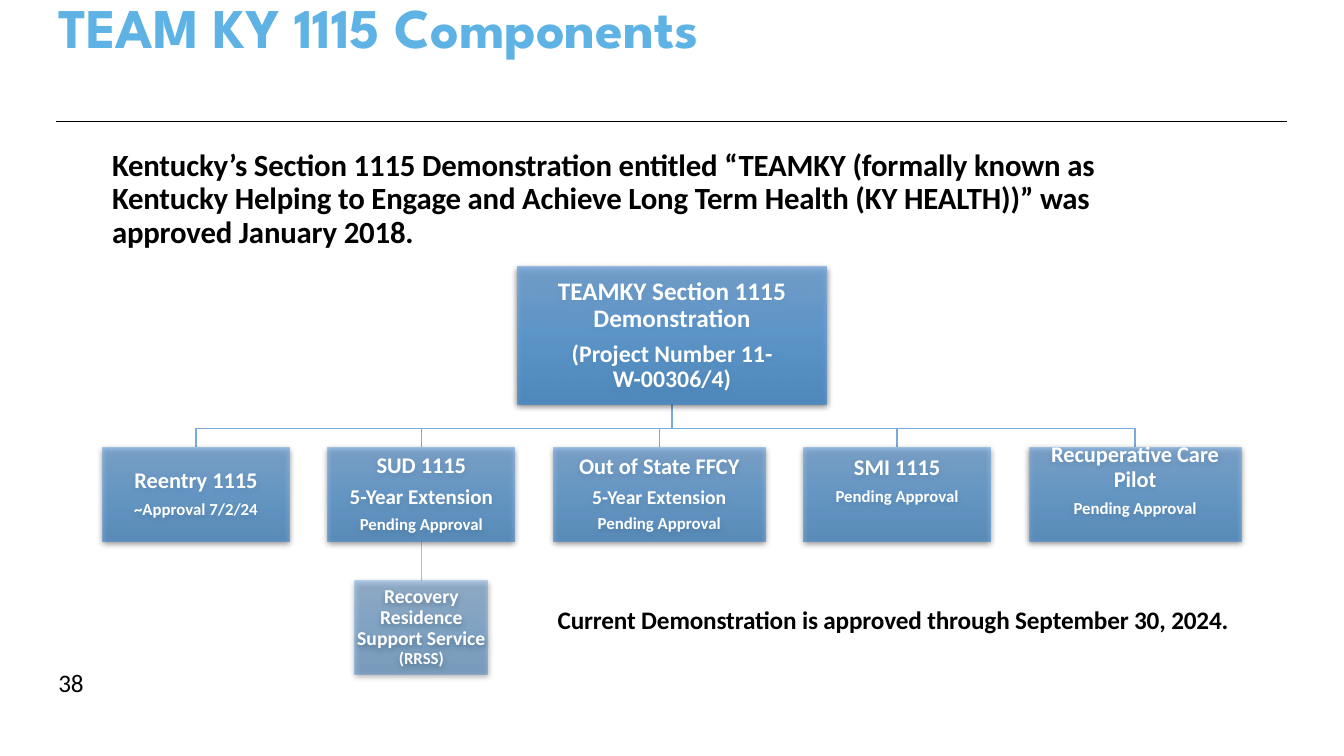
import pptx
import pptx.dml.color
import pptx.enum.shapes
import pptx.enum.text
import pptx.oxml
import pptx.oxml.ns
import pptx.util

Pt = pptx.util.Pt
Inches = pptx.util.Inches
RGBColor = pptx.dml.color.RGBColor
ALIGN = pptx.enum.text.PP_ALIGN
ANCHOR = pptx.enum.text.MSO_ANCHOR
SHAPE = pptx.enum.shapes.MSO_SHAPE

TITLE_BLUE = RGBColor(0x5E, 0xB3, 0xE4)
BRANCH_BLUE = RGBColor(0x7A, 0xA9, 0xDA)
TWIG_BLUE = RGBColor(0xA5, 0xC0, 0xE3)
BOX_GRADIENT = [
    (0, RGBColor(0x71, 0xA6, 0xDB)),
    (50, RGBColor(0x55, 0x9B, 0xDB)),
    (100, RGBColor(0x44, 0x8A, 0xCA)),
]
BLACK = RGBColor(0, 0, 0)
WHITE = RGBColor(255, 255, 255)
NAMESPACE = pptx.oxml.ns.nsdecls("a")

presentation = pptx.Presentation()
presentation.slide_width = Inches(13.33)
presentation.slide_height = Inches(7.5)
slide = presentation.slides.add_slide(presentation.slide_layouts[6])
column = presentation.slide_width / 100
row = presentation.slide_height / 75


def write_text(shape, paragraphs, color, margins, font="Calibri", bold=True,
               align=ALIGN.LEFT, anchor=ANCHOR.TOP, spacing=0.9, tracking=0):
    frame = shape.text_frame
    frame.word_wrap = True
    frame.vertical_anchor = anchor
    frame.margin_left, frame.margin_top, frame.margin_right, frame.margin_bottom = map(Inches, margins)
    for index, runs in enumerate(paragraphs):
        paragraph = frame.add_paragraph() if index else frame.paragraphs[0]
        paragraph.alignment = align
        paragraph.line_spacing = spacing
        if index < len(paragraphs) - 1:
            paragraph.space_after = Pt(round(0.35 * runs[0][1], 1))
        for text, size in runs:
            run = paragraph.add_run()
            run.text = text
            run.font.name = font
            run.font.size = Pt(size)
            run.font.bold = bold
            run.font.color.rgb = color
            if tracking:
                run._r.get_or_add_rPr().set("spc", str(tracking))


def add_box(center, top, width, height, opacity, paragraphs, bottom_margin=0.01):
    box = slide.shapes.add_shape(
        SHAPE.RECTANGLE, int((center - width / 2) * column), int(top * row),
        int(width * column), int(height * row))
    box.line.fill.background()
    stops = "".join(
        f'<a:gs pos="{position * 1000}"><a:srgbClr val="{color}">'
        f'<a:alpha val="{opacity * 1000}"/></a:srgbClr></a:gs>'
        for position, color in BOX_GRADIENT)
    properties = box._element.spPr
    properties.insert(2, pptx.oxml.parse_xml(
        f'<a:gradFill {NAMESPACE} rotWithShape="1"><a:gsLst>{stops}</a:gsLst>'
        '<a:lin ang="5400000" scaled="0"/></a:gradFill>'))
    properties.append(pptx.oxml.parse_xml(
        f'<a:effectLst {NAMESPACE}><a:outerShdw blurRad="{Pt(4.5)}" dist="{Pt(1.5)}" '
        'dir="5400000" algn="ctr" rotWithShape="0"><a:srgbClr val="000000">'
        '<a:alpha val="63000"/></a:srgbClr></a:outerShdw></a:effectLst>'))
    write_text(box, paragraphs, WHITE, (0.01, 0.01, 0.01, bottom_margin),
               align=ALIGN.CENTER, anchor=ANCHOR.MIDDLE)


ROOT_CENTER, ROOT_TOP, ROOT_HEIGHT = 50, 26.5, 13.6
ROOT_BOTTOM = ROOT_TOP + ROOT_HEIGHT
BRANCH_ROW = 42.5
NODE_TOP, NODE_HEIGHT = 44.4, 9.3
NODE_BOTTOM = NODE_TOP + NODE_HEIGHT
SUPPORT_TOP = 57.6
NODES_LEFT, NODES_RIGHT = 7.65, 92.33
NARROW, WIDE = 13.88, 15.75

pending = [("Pending Approval", 12)]
nodes = [
    (NARROW, [[("Reentry 1115", 16)], [("~Approval 7/2/24", 12)]], 0.01),
    (NARROW, [[("SUD 1115", 16)], [("5-Year Extension", 15)], pending], 0.01),
    (WIDE, [[("Out of State FFCY", 16)], [("5-Year Extension", 14)], pending], 0.01),
    (NARROW, [[("SMI 1115", 16)], pending], 0.28),
    (WIDE, [[("Recuperative Care Pilot", 16)], pending], 0.28),
]
gap = (NODES_RIGHT - NODES_LEFT - sum(node[0] for node in nodes)) / (len(nodes) - 1)
centers = []
left = NODES_LEFT
for width, paragraphs, bottom_margin in nodes:
    centers.append(left + width / 2)
    left += width + gap
sud_center = centers[1]

for center in centers:
    builder = slide.shapes.build_freeform(
        int(ROOT_CENTER * column), int(ROOT_BOTTOM * row))
    builder.add_line_segments(
        [(int(x * column), int(y * row)) for x, y in
         [(ROOT_CENTER, BRANCH_ROW), (center, BRANCH_ROW), (center, NODE_TOP)]],
        close=False)
    branch = builder.convert_to_shape()
    branch.shadow.inherit = False
    branch.fill.background()
    branch.line.color.rgb = BRANCH_BLUE
    branch.line.width = Pt(1)

straight_lines = [
    (4.2, 12, 95.78, 12, BLACK, 0.5),
    (sud_center, NODE_BOTTOM, sud_center, SUPPORT_TOP, TWIG_BLUE, 1),
]
for start_x, start_y, end_x, end_y, color, weight in straight_lines:
    line = slide.shapes.add_connector(
        pptx.enum.shapes.MSO_CONNECTOR.STRAIGHT, int(start_x * column), int(start_y * row),
        int(end_x * column), int(end_y * row))
    line.line.color.rgb = color
    line.line.width = Pt(weight)
    line._element.spPr.append(pptx.oxml.parse_xml(f"<a:effectLst {NAMESPACE}/>"))

add_box(ROOT_CENTER, ROOT_TOP, 23.03, ROOT_HEIGHT, 80, [
    [("TEAMKY Section 1115 Demonstration", 18)],
    [("(Project Number 11-W-00306/4)", 17)],
])
for center, (width, paragraphs, bottom_margin) in zip(centers, nodes):
    add_box(center, NODE_TOP, width, NODE_HEIGHT, 70, paragraphs, bottom_margin)
add_box(sud_center, SUPPORT_TOP, 9.9, NODE_HEIGHT, 50, [
    [("Recovery Residence Support Service ", 14), ("(RRSS)", 12)],
])

body_style = {"color": BLACK, "margins": (0.1, 0.05, 0.5, 0.05), "tracking": -10}
texts = [
    (3.6, 0.6, 91.5, 14.5, "TEAM KY 1115 Components", 40,
     {"color": TITLE_BLUE, "margins": (0.1, 0.05, 0.1, 0.05),
      "font": "League Spartan", "spacing": Pt(34.6)}),
    (7.6, 14.4, 84.83, 7.3,
     "Kentucky’s Section 1115 Demonstration entitled “TEAMKY (formally known as "
     "Kentucky Helping to Engage and Achieve Long Term Health (KY HEALTH))” was "
     "approved January 2018.", 22, body_style),
    (27.2, 59.8, 67.95, 4.3,
     "Current Demonstration is approved through September 30, 2024.", 18,
     {**body_style, "align": ALIGN.RIGHT}),
    (4.05, 66.7, 2.63, 2.6, "38", 18,
     {"color": BLACK, "margins": (0.04, 0, 0, 0), "bold": False,
      "spacing": Pt(18.1), "tracking": -20}),
]
for left, top, width, height, text, size, style in texts:
    text_box = slide.shapes.add_textbox(
        int(left * column), int(top * row), int(width * column), int(height * row))
    write_text(text_box, [[(text, size)]], **style)

presentation.save("out.pptx")
